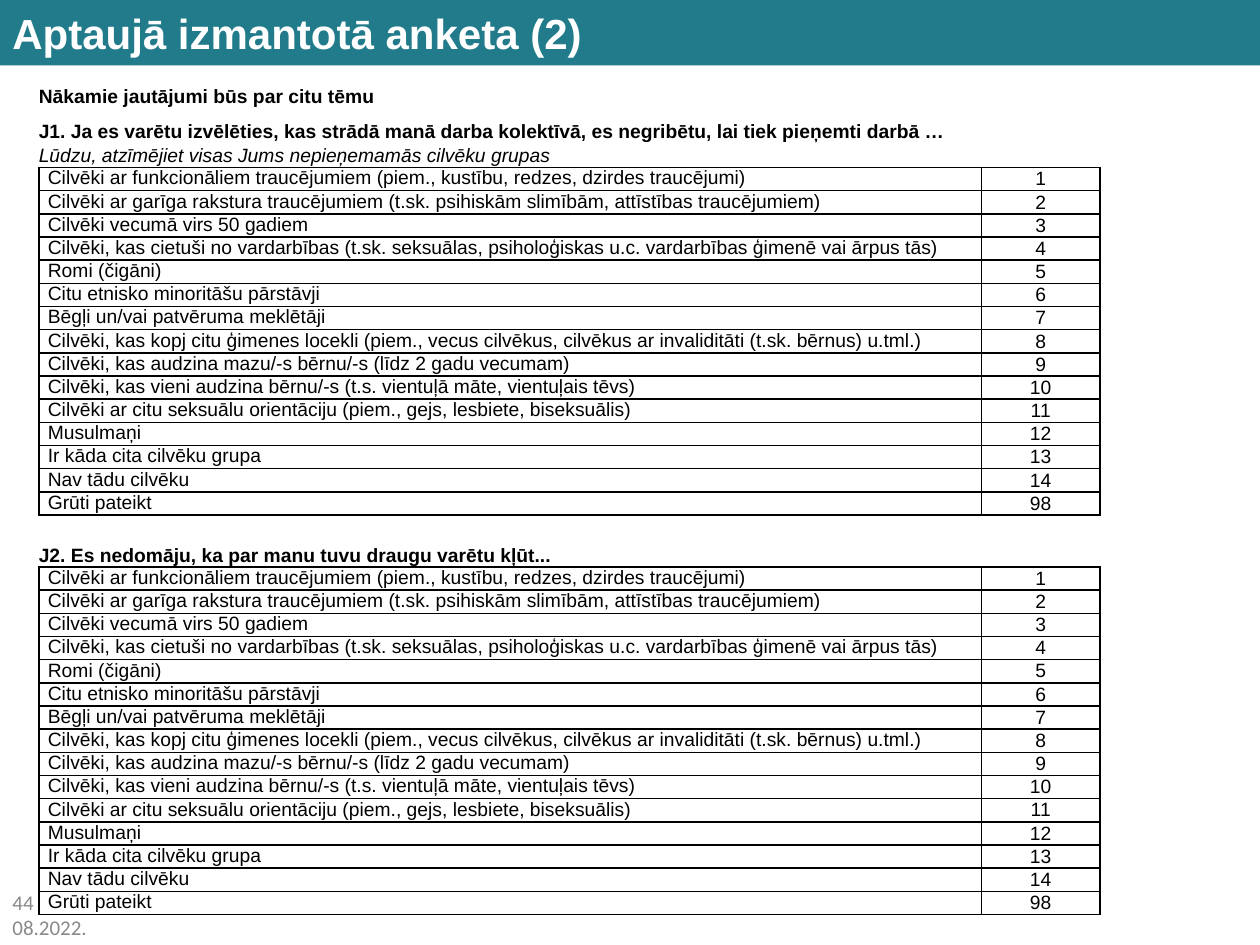
from dataclasses import dataclass

import pptx
import pptx.dml.color
import pptx.enum.shapes
import pptx.enum.text
import pptx.oxml
import pptx.oxml.ns
import pptx.util

ALIGN = pptx.enum.text.PP_ALIGN
ANCHOR = pptx.enum.text.MSO_ANCHOR
UNIT = pptx.util.Inches(0.1)  # the slide is a grid of 100 columns by 75 rows


@dataclass(frozen=True)
class Theme:
    font: str = "Arial"
    footer_font: str = "Calibri"
    band: str = "227B8B"
    white: str = "FFFFFF"
    black: str = "000000"
    grey: str = "898989"
    title_size: int = 24
    body_size: int = 11
    footer_size: int = 12
    border: float = 1


THEME = Theme()

ANSWERS = [
    ("Cilvēki ar funkcionāliem traucējumiem (piem., kustību, redzes, dzirdes traucējumi)", 1),
    ("Cilvēki ar garīga rakstura traucējumiem (t.sk. psihiskām slimībām, attīstības traucējumiem)", 2),
    ("Cilvēki vecumā virs 50 gadiem", 3),
    ("Cilvēki, kas cietuši no vardarbības (t.sk. seksuālas, psiholoģiskas u.c. vardarbības "
     "ģimenē vai ārpus tās)", 4),
    ("Romi (čigāni)", 5),
    ("Citu etnisko minoritāšu pārstāvji", 6),
    ("Bēgļi un/vai patvēruma meklētāji", 7),
    ("Cilvēki, kas kopj citu ģimenes locekli (piem., vecus cilvēkus, cilvēkus ar invaliditāti "
     "(t.sk. bērnus) u.tml.)", 8),
    ("Cilvēki, kas audzina mazu/-s bērnu/-s (līdz 2 gadu vecumam)", 9),
    ("Cilvēki, kas vieni audzina bērnu/-s (t.s. vientuļā māte, vientuļais tēvs)", 10),
    ("Cilvēki ar citu seksuālu orientāciju (piem., gejs, lesbiete, biseksuālis)", 11),
    ("Musulmaņi", 12),
    ("Ir kāda cita cilvēku grupa", 13),
    ("Nav tādu cilvēku", 14),
    ("Grūti pateikt", 98),
]
JUSTIFIED_CODES = {13, 14, 98}


def grid(*lengths):
    return [round(length * UNIT) for length in lengths]


def style(p, size, color, font=THEME.font, bold=False, italic=False):
    p.font.size = pptx.util.Pt(size)
    p.font.color.rgb = pptx.dml.color.RGBColor.from_string(color)
    p.font.name = font
    p.font.bold = bold
    p.font.italic = italic


def add_lines(s, box, lines, **look):
    """Text box with one paragraph for each line."""
    tf = s.shapes.add_textbox(*grid(*box)).text_frame
    tf.word_wrap = True
    tf.text = "\n".join(lines)
    for p in tf.paragraphs:
        style(p, **look)
    return tf.paragraphs


def add_title(s, box, text):
    sp = s.shapes.add_shape(pptx.enum.shapes.MSO_SHAPE.RECTANGLE, *grid(*box))
    sp.shadow.inherit = False
    sp.fill.solid()
    sp.fill.fore_color.rgb = pptx.dml.color.RGBColor.from_string(THEME.band)
    sp.line.fill.background()
    tf = sp.text_frame
    tf.vertical_anchor = ANCHOR.MIDDLE
    p = tf.paragraphs[0]
    p.text = text
    p.alignment = ALIGN.LEFT
    style(p, THEME.title_size, THEME.white, bold=True)


def add_borders(cell):
    props = cell._tc.get_or_add_tcPr()
    width = pptx.util.Pt(THEME.border)
    for i, side in enumerate(("lnL", "lnR", "lnT", "lnB")):
        props.insert(i, pptx.oxml.parse_xml(
            f'<a:{side} {pptx.oxml.ns.nsdecls("a")} w="{width}"><a:solidFill>'
            f'<a:srgbClr val="{THEME.black}"/></a:solidFill></a:{side}>'))


def fill_cell(cell, text, alignment, anchor):
    cell.margin_left = cell.margin_right = grid(0.7)[0]
    cell.margin_top = cell.margin_bottom = 0
    cell.vertical_anchor = anchor
    cell.fill.background()
    p = cell.text_frame.paragraphs[0]
    p.text = text
    p.alignment = alignment
    style(p, THEME.body_size, THEME.black)
    add_borders(cell)


def add_answers(s, box, answers, code_width=9.4):
    """Answer table: wording on the left, its code on the right."""
    frame = s.shapes.add_table(len(answers), 2, *grid(*box))
    table = frame.table
    table.first_row = table.horz_banding = False
    table.columns[0].width, table.columns[1].width = grid(box[2] - code_width, code_width)
    for row, (text, code) in zip(table.rows, answers):
        row.height = grid(box[3] / len(answers))[0]
        alignment = ALIGN.JUSTIFY if code in JUSTIFIED_CODES else ALIGN.LEFT
        fill_cell(row.cells[0], text, alignment, ANCHOR.TOP)
        fill_cell(row.cells[1], str(code), ALIGN.CENTER, ANCHOR.MIDDLE)


def add_question(s, box, heading_height, lines):
    """Heading lines with the answer table under them."""
    left, top, width, height = box
    table_height = 27.5
    paragraphs = add_lines(s, (left, top, 80.3, heading_height), lines,
                           size=THEME.body_size, color=THEME.black, bold=True)
    add_answers(s, (left + 1, top + height - table_height, width - 1, table_height), ANSWERS)
    return paragraphs


def main():
    prs = pptx.Presentation()
    prs.slide_width, prs.slide_height = grid(100, 75)
    s = prs.slides.add_slide(prs.slide_layouts[6])

    # Page number and date
    add_lines(s, (0, 70.1, 12.8, 4.9), ["44", "08.2022."], size=THEME.footer_size,
              color=THEME.grey, font=THEME.footer_font)

    # Title band
    add_title(s, (0, 0, 100, 5.2), "Aptaujā izmantotā anketa (2)")

    # First question, with an introduction and an instruction
    intro, _, hint = add_question(s, (2.1, 6.2, 85.2, 34.6), 7.7, [
        "Nākamie jautājumi būs par citu tēmu",
        "J1. Ja es varētu izvēlēties, kas strādā manā darba kolektīvā, es negribētu, "
        "lai tiek pieņemti darbā …",
        "Lūdzu, atzīmējiet visas Jums nepieņemamās cilvēku grupas",
    ])
    intro.space_after = pptx.util.Pt(7)
    style(hint, THEME.body_size, THEME.black, italic=True)

    # Second question
    add_question(s, (2.1, 42.6, 85.2, 29.9), 2.9,
                 ["J2. Es nedomāju, ka par manu tuvu draugu varētu kļūt..."])

    prs.save("out.pptx")


if __name__ == "__main__":
    main()
